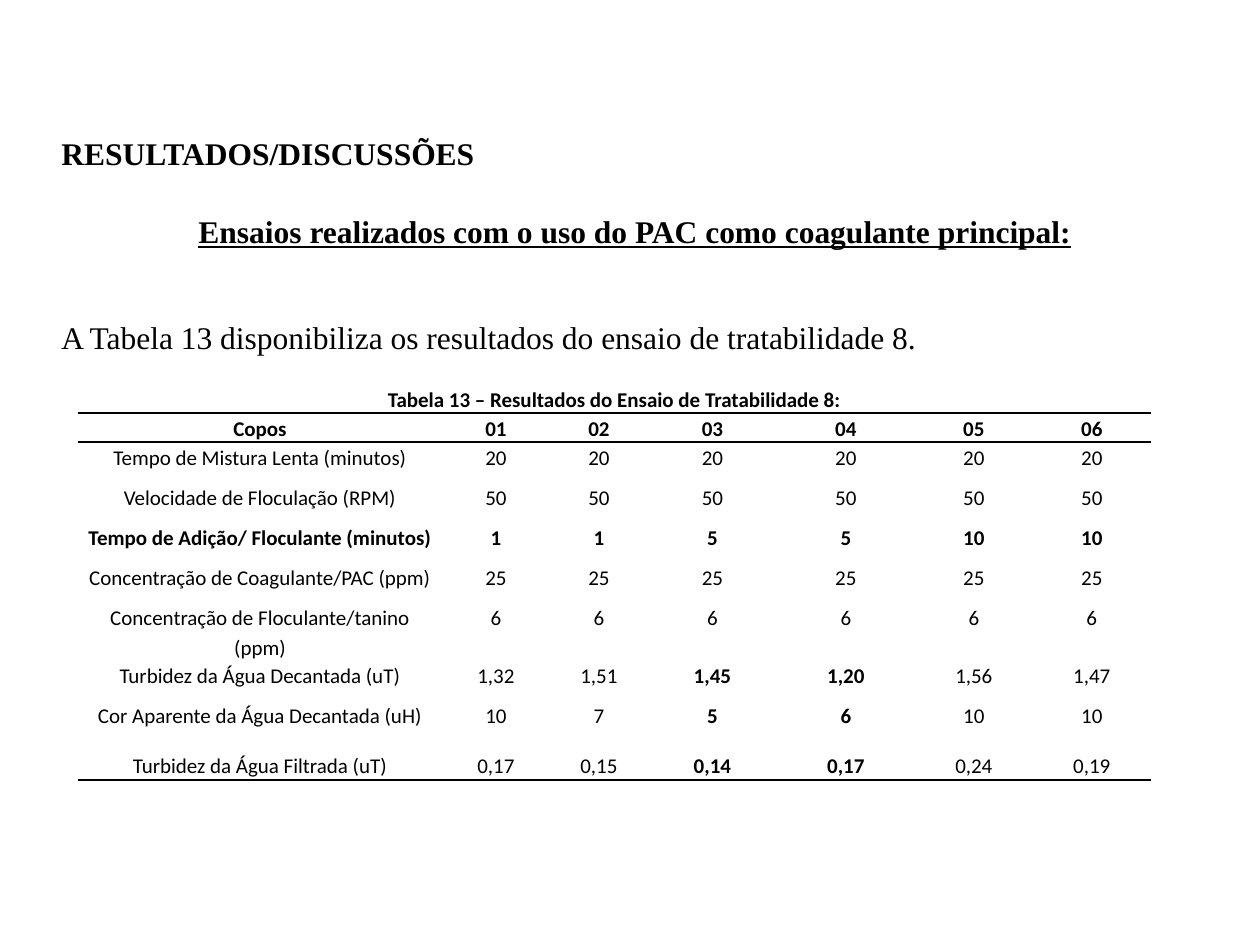
from lxml import etree
from pptx import Presentation
from pptx.dml.color import RGBColor
from pptx.enum.text import MSO_ANCHOR, PP_ALIGN
from pptx.oxml.ns import qn
from pptx.util import Pt

EMU_PER_INCH, PX_PER_INCH = 914400, 126
LEFT, CENTER, JUSTIFY = PP_ALIGN.LEFT, PP_ALIGN.CENTER, PP_ALIGN.JUSTIFY
TOP = MSO_ANCHOR.TOP
COLORS = {"text": "000000", "rule": "000000"}
FONTS = {"body": "Times New Roman", "table": "Calibri"}

# text, alignment, space before (pt), bold, underline
PARAGRAPHS = [
    ("RESULTADOS/DISCUSSÕES", JUSTIFY, 0, True, False),
    ("Ensaios realizados com o uso do PAC como coagulante principal:",
     CENTER, 23, True, True),
    ("A Tabela 13 disponibiliza os resultados do ensaio de tratabilidade 8.",
     LEFT, 39, False, False),
]
CAPTION = "Tabela 13 – Resultados do Ensaio de Tratabilidade 8:"
ROWS = [
    ["Copos", "01", "02", "03", "04", "05", "06"],
    ["Tempo de Mistura Lenta (minutos)"] + ["20"] * 6,
    ["Velocidade de Floculação (RPM)"] + ["50"] * 6,
    ["Tempo de Adição/ Floculante (minutos)", "1", "1", "5", "5", "10", "10"],
    ["Concentração de Coagulante/PAC (ppm)"] + ["25"] * 6,
    ["Concentração de Floculante/tanino (ppm)"] + ["6"] * 6,
    ["Turbidez da Água Decantada (uT)", "1,32", "1,51", "1,45", "1,20", "1,56", "1,47"],
    ["Cor Aparente da Água Decantada (uH)", "10", "7", "5", "6", "10", "10"],
    ["Turbidez da Água Filtrada (uT)", "0,17", "0,15", "0,14", "0,17", "0,24", "0,19"],
]
COL_WIDTHS = [364, 108, 98, 129, 138, 118, 118]
ROW_HEIGHTS = [29, 29, 40, 40, 40, 40, 58, 40, 50, 30]
BOLD_ROWS = {0, 1, 4}
BEST_ROWS, BEST_COLS = {7, 8, 9}, {3, 4}
RULED_ROWS = {0, 1, 9}  # rows with a line below


def px(n):
    return round(n * EMU_PER_INCH / PX_PER_INCH)


class SlideBuilder:
    def __init__(self, slide):
        self.slide = slide

    def run(self, p, text, font, size, bold=False, underline=False):
        r = p.add_run()
        r.text = text
        r.font.name, r.font.size = font, Pt(size)
        r.font.bold, r.font.underline = bold, underline
        r.font.color.rgb = RGBColor.from_string(COLORS["text"])

    def text(self, x, y, w, h, paragraphs, inset_top):
        tf = self.slide.shapes.add_textbox(px(x), px(y), px(w), px(h)).text_frame
        tf.word_wrap = True
        tf.vertical_anchor = TOP
        tf.margin_top = px(inset_top)
        for i, (text, align, before, bold, underline) in enumerate(paragraphs):
            p = tf.add_paragraph() if i else tf.paragraphs[0]
            p.alignment = align
            if before:
                p.space_before = Pt(before)
            self.run(p, text, FONTS["body"], 18, bold, underline)

    def borders(self, cell, ruled):
        """Draw the given sides ("T", "B") and clear the others."""
        tc_pr = cell._tc.get_or_add_tcPr()
        for i, side in enumerate("LRTB"):
            ln = etree.Element(qn("a:ln" + side), w=str(Pt(1)))
            if side in ruled:
                fill = etree.SubElement(ln, qn("a:solidFill"))
                etree.SubElement(fill, qn("a:srgbClr"), val=COLORS["rule"])
            else:
                etree.SubElement(ln, qn("a:noFill"))
            tc_pr.insert(i, ln)

    def cell(self, cell, text, bold, ruled):
        cell.fill.background()
        cell.margin_left = cell.margin_right = px(6)
        cell.margin_top = cell.margin_bottom = 0
        cell.vertical_anchor = TOP
        self.borders(cell, ruled)
        p = cell.text_frame.paragraphs[0]
        p.alignment = CENTER
        p.line_spacing = 1.15
        if text:
            self.run(p, text, FONTS["table"], 12, bold)

    def table(self, x, y, caption, rows):
        cells = [[caption] + [""] * (len(COL_WIDTHS) - 1)] + rows
        table = self.slide.shapes.add_table(
            len(cells), len(COL_WIDTHS), px(x), px(y),
            px(sum(COL_WIDTHS)), px(sum(ROW_HEIGHTS))).table
        table.first_row = table.horz_banding = False
        for col, width in zip(table.columns, COL_WIDTHS):
            col.width = px(width)
        for row, height in zip(table.rows, ROW_HEIGHTS):
            row.height = px(height)
        table.cell(0, 0).merge(table.cell(0, len(COL_WIDTHS) - 1))
        for i, row in enumerate(cells):
            ruled = ("T" if i - 1 in RULED_ROWS else "") + ("B" if i in RULED_ROWS else "")
            for j, text in enumerate(row):
                bold = i in BOLD_ROWS or (i in BEST_ROWS and j in BEST_COLS)
                self.cell(table.cell(i, j), text, bold, ruled)


def main():
    prs = Presentation()
    prs.slide_width, prs.slide_height = px(1260), px(945)
    s = SlideBuilder(prs.slides.add_slide(prs.slide_layouts[6]))
    s.text(49, 49, 1172, 310, PARAGRAPHS, inset_top=85)
    s.table(78, 384, CAPTION, ROWS)
    prs.save("out.pptx")


if __name__ == "__main__":
    main()
